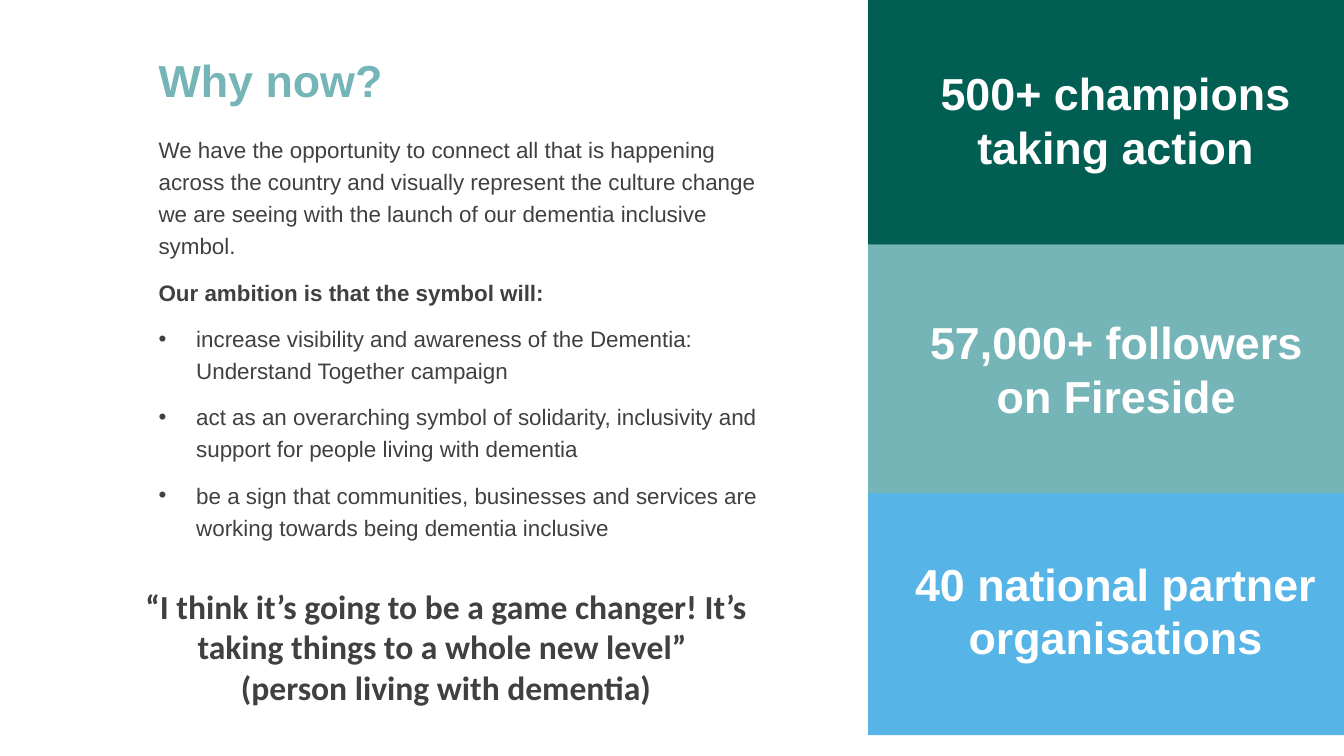
import pptx
import pptx.dml.color
import pptx.enum.shapes
import pptx.enum.text
import pptx.oxml
import pptx.oxml.ns
import pptx.util
from pptx.util import Inches

ALIGN = pptx.enum.text.PP_ALIGN


def color(code):
    return pptx.dml.color.RGBColor.from_string(code)


def write(shape, lines, size, code, bold=True, name="Arial", align=ALIGN.CENTER, pad=0):
    """Fill the shape with paragraphs of one look, and return the paragraphs."""
    frame = shape.text_frame
    frame.text = "\n".join(lines)
    frame.word_wrap = True
    frame.auto_size = pptx.enum.text.MSO_AUTO_SIZE.NONE
    frame.vertical_anchor = pptx.enum.text.MSO_ANCHOR.TOP
    frame.margin_left = frame.margin_right = Inches(pad)
    frame.margin_top = frame.margin_bottom = Inches(pad / 2)
    for para in frame.paragraphs:
        para.alignment = align
        para.space_before = pptx.util.Pt(0)
        para.font.name = name
        para.font.size = pptx.util.Pt(size)
        para.font.bold = bold
        para.font.color.rgb = color(code)
    return frame.paragraphs


deck = pptx.Presentation()
deck.slide_width = Inches(10)
deck.slide_height = Inches(10) * 9 // 16
slide = deck.slides.add_slide(deck.slide_layouts[1])
shapes = slide.shapes

# Title
title = shapes.title
title.left, title.top = Inches(1.18), Inches(0.44)
title.width, title.height = Inches(4.81), Inches(0.48)
head = write(title, ["Why now?"], 24, "75B5B8", align=ALIGN.LEFT)[0]
head.line_spacing = 0.9

# Body: an opening, a bold lead-in and three bullets
body = slide.placeholders[1]
body.left, body.top = Inches(1.18), Inches(0.97)
body.width, body.height = Inches(4.64), Inches(3.26)
lines = [
    "We have the opportunity to connect all that is happening across the country "
    "and visually represent the culture change we are seeing with the launch of "
    "our dementia inclusive symbol.",
    "Our ambition is that the symbol will:",
    "increase visibility and awareness of the Dementia: Understand Together campaign",
    "act as an overarching symbol of solidarity, inclusivity and support for people "
    "living with dementia",
    "be a sign that communities, businesses and services are working towards being "
    "dementia inclusive",
]
paras = write(body, lines, 12, "404040", bold=False, align=ALIGN.LEFT)
paras[1].font.bold = True
for i, para in enumerate(paras):
    para.line_spacing = 1.2
    if i > 0:
        para.space_before = pptx.util.Pt(7.5)
    props = para._p.get_or_add_pPr()
    indent = Inches(0.28) if i > 1 else 0
    props.set("marL", str(indent))
    props.set("indent", str(-indent))
    tag = '<a:buChar %s char="•"/>' if i > 1 else "<a:buNone %s/>"
    mark = pptx.oxml.parse_xml(tag % pptx.oxml.ns.nsdecls("a"))
    props.insert_element_before(mark, "a:tabLst", "a:defRPr", "a:extLst")

# Panels, from the bottom up
panels = [
    (3.62, "56B4E6", "40 national partner organisations", 6.78, 4.14, 3.04),
    (1.82, "75B5B8", "57,000+ followers on Fireside", 6.71, 2.34, 3.19),
    (-0.03, "005E52", "500+ champions taking action", 6.53, 0.49, 3.54),
]
for top, code, text, left, y, width in panels:
    panel = shapes.add_shape(
        pptx.enum.shapes.MSO_SHAPE.RECTANGLE,
        Inches(6.46), Inches(top), Inches(3.54), Inches(1.85))
    panel.shadow.inherit = False
    panel.fill.solid()
    panel.fill.fore_color.rgb = color(code)
    panel.line.fill.background()
    label = shapes.add_textbox(Inches(left), Inches(y), Inches(width), Inches(0.81))
    write(label, [text], 24, "FFFFFF")

# Quote
quote = shapes.add_textbox(Inches(0.82), Inches(4.31), Inches(5), Inches(1.01))
words = [
    "“I think it’s going to be a game changer! It’s taking things to a whole new level” ",
    "(person living with dementia)",
]
write(quote, words, 18, "404040", name="Calibri", pad=0.1)

deck.save("out.pptx")
